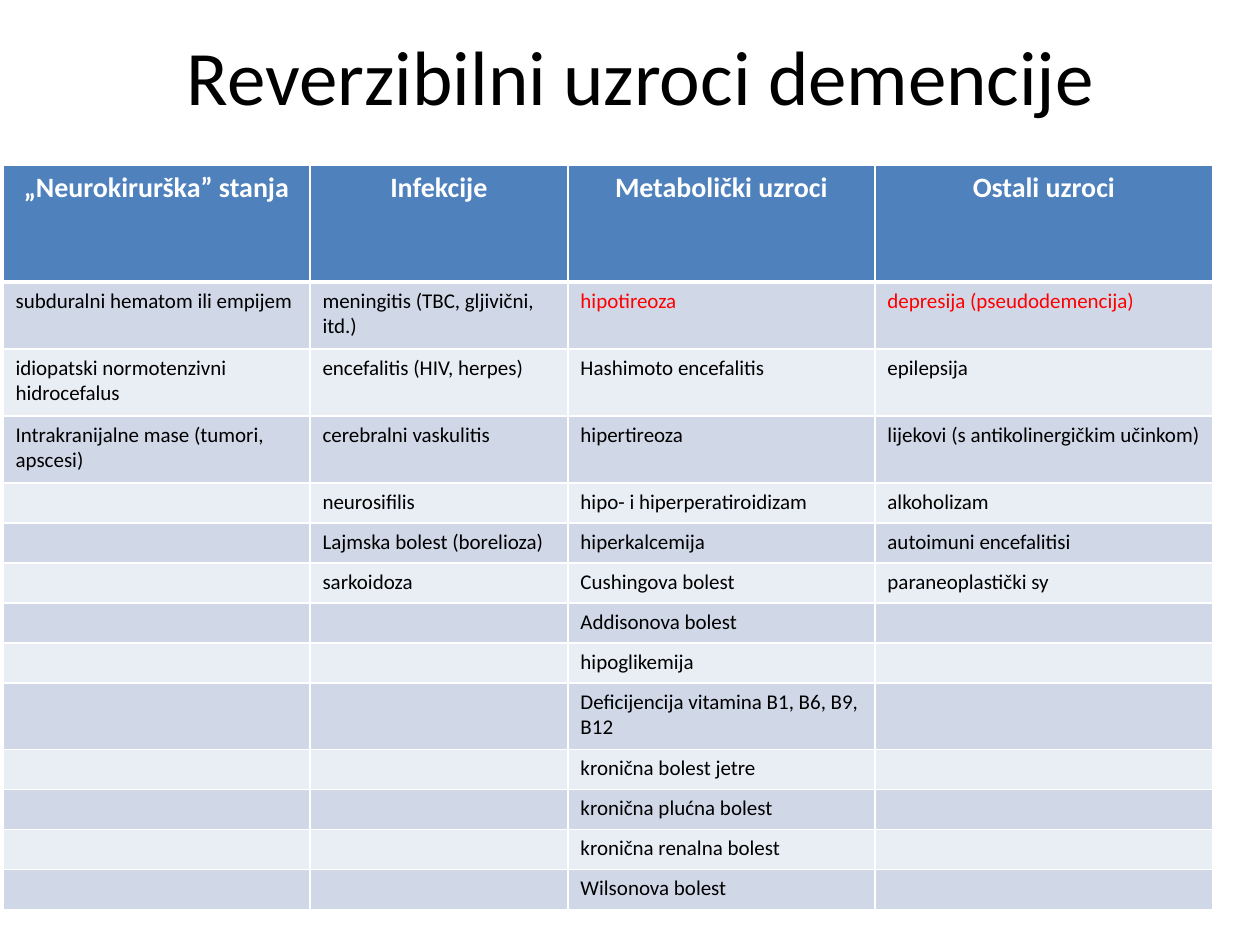
from itertools import zip_longest
from lxml import etree
from pptx import Presentation, util as u
from pptx.dml.color import RGBColor
from pptx.enum import text
from pptx.oxml.ns import qn

PX = 914400 / 126
FONT = "Calibri"
COLORS = {
    "header": "4F81BD", "odd": "D0D8E8", "even": "E9EDF4",
    "white": "FFFFFF", "black": "000000", "red": "FF0000",
}
CAUSES = {
    "„Neurokirurška” stanja": [
        "subduralni hematom ili empijem",
        "idiopatski normotenzivni hidrocefalus",
        "Intrakranijalne mase (tumori, apscesi)",
    ],
    "Infekcije": [
        "meningitis (TBC, gljivični, itd.)", "encefalitis (HIV, herpes)",
        "cerebralni vaskulitis", "neurosifilis",
        "Lajmska bolest (borelioza)", "sarkoidoza",
    ],
    "Metabolički uzroci": [
        "hipotireoza", "Hashimoto encefalitis", "hipertireoza",
        "hipo- i hiperperatiroidizam", "hiperkalcemija",
        "Cushingova bolest", "Addisonova bolest", "hipoglikemija",
        "Deficijencija vitamina B1, B6, B9, B12", "kronična bolest jetre",
        "kronična plućna bolest", "kronična renalna bolest",
        "Wilsonova bolest",
    ],
    "Ostali uzroci": [
        "depresija (pseudodemencija)", "epilepsija",
        "lijekovi (s antikolinergičkim učinkom)", "alkoholizam",
        "autoimuni encefalitisi", "paraneoplastički sy",
    ],
}
HIGHLIGHTED = {"hipotireoza", "depresija (pseudodemencija)"}
COL_WIDTHS = [307, 258, 307, 338]
HEADER_H, ONE_LINE_H, TWO_LINE_H = 117, 40, 67
TWO_LINE_ROWS = {1, 2, 3, 9}


def px(n):
    return u.Emu(round(n * PX))


def rgb(name):
    return RGBColor.from_string(COLORS[name])


def style_font(font, size, color, bold=False):
    font.name = FONT
    font.size = u.Pt(size)
    font.bold = bold
    font.color.rgb = rgb(color)


def add_borders(cell, widths):
    tcPr = cell._tc.get_or_add_tcPr()
    for side, width in zip("LRTB", widths):
        ln = etree.SubElement(tcPr, qn(f"a:ln{side}"), w=str(u.Pt(width)))
        fill = etree.SubElement(ln, qn("a:solidFill"))
        etree.SubElement(fill, qn("a:srgbClr"), val=COLORS["white"])


def fill_cell(cell, content, row):
    header = row == 0
    size = 16 if header else 12
    add_borders(cell, (1, 1, 3 if row == 1 else 1, 3 if header else 1))
    cell.fill.solid()
    cell.fill.fore_color.rgb = rgb("header" if header else "odd" if row % 2 else "even")
    p = cell.text_frame.paragraphs[0]
    p.text = content
    if header:
        p.alignment = text.PP_ALIGN.CENTER
    color = "white" if header else "red" if content in HIGHLIGHTED else "black"
    for r in p.runs:
        style_font(r.font, size, color, header)
    if not content:
        etree.SubElement(p._p, qn("a:endParaRPr"), sz=str(size * 100))


def add_title(s, x, y, w, h):
    sp = s.shapes.title
    sp.left, sp.top, sp.width, sp.height = map(px, (x, y, w, h))
    tf = sp.text_frame
    tf.text = "Reverzibilni uzroci demencije"
    tf.vertical_anchor = text.MSO_ANCHOR.MIDDLE
    p = tf.paragraphs[0]
    p.alignment = text.PP_ALIGN.CENTER
    style_font(p.runs[0].font, 44, "black")


def add_causes_table(s, x, y):
    rows = [list(CAUSES), *zip_longest(*CAUSES.values(), fillvalue="")]
    heights = [HEADER_H] + [
        TWO_LINE_H if i in TWO_LINE_ROWS else ONE_LINE_H
        for i in range(1, len(rows))
    ]
    table = s.shapes.add_table(
        len(rows), len(COL_WIDTHS), px(x), px(y),
        px(sum(COL_WIDTHS)), px(sum(heights)),
    ).table
    for column, width in zip(table.columns, COL_WIDTHS):
        column.width = px(width)
    for i, (height, contents) in enumerate(zip(heights, rows)):
        table.rows[i].height = px(height)
        for j, content in enumerate(contents):
            fill_cell(table.cell(i, j), content, i)


def main():
    prs = Presentation()
    prs.slide_width, prs.slide_height = u.Inches(10), u.Inches(7.5)
    s = prs.slides.add_slide(prs.slide_layouts[5])
    add_title(s, 74, -4, 1134, 158)
    add_causes_table(s, 3, 165)
    prs.save("out.pptx")


if __name__ == "__main__":
    main()
